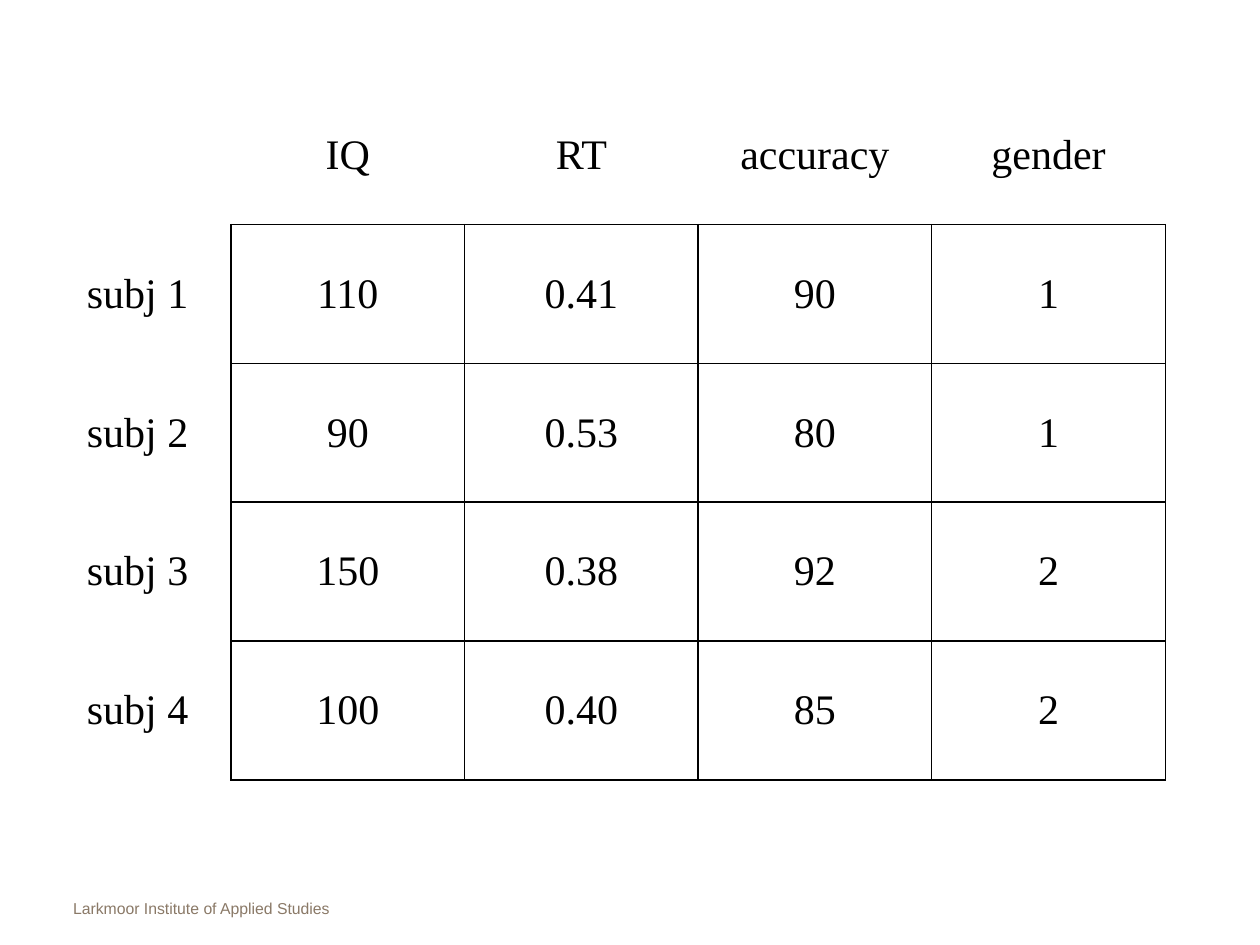
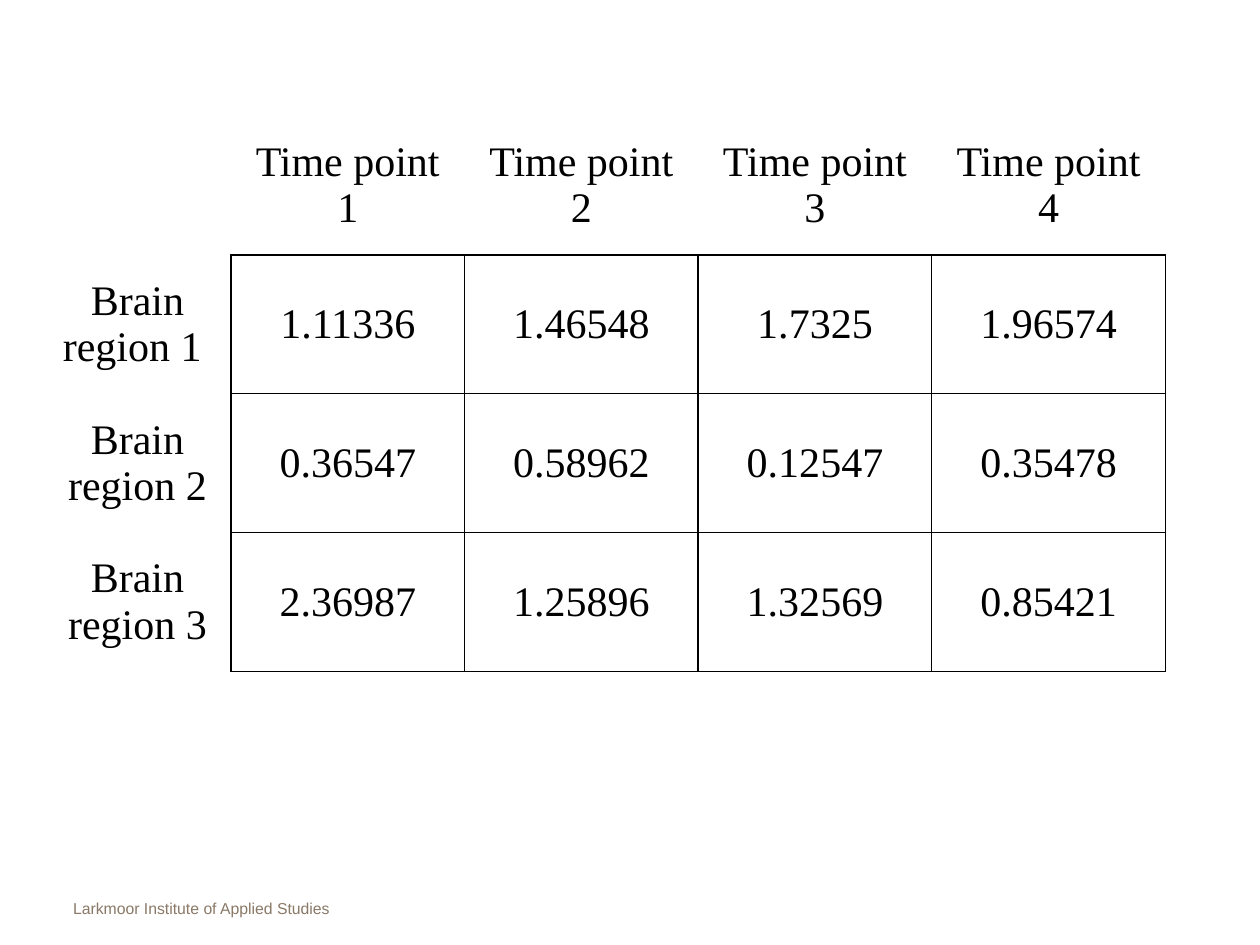
import pptx
import pptx.dml.color
import pptx.enum.text
import pptx.util
from pptx.oxml.ns import qn
import lxml.etree

SLIDE_WIDTH = pptx.util.Inches(10)
SLIDE_HEIGHT = pptx.util.Inches(7.5)
BLACK = "000000"
FOOTER_COLOUR = "8A7967"
FOOTER_TEXT = "Larkmoor Institute of Applied Studies"

TABLE_LEFT = pptx.util.Inches(0.35)
TABLE_WIDTH = pptx.util.Inches(8.9)
ROW_HEIGHT = pptx.util.Cm(2.8)
LABEL_SHARE, VALUE_SHARE = 4, 5  # relative widths of label and value columns
BORDER_WIDTH = pptx.util.Pt(1)

SUBJECT_ROWS = [
    ["", "IQ", "RT", "accuracy", "gender"],
    ["subj 1", "110", "0.41", "90", "1"],
    ["subj 2", "90", "0.53", "80", "1"],
    ["subj 3", "150", "0.38", "92", "2"],
    ["subj 4", "100", "0.40", "85", "2"],
]
REGION_ROWS = [
    [""] + [f"Time point\n{number}" for number in range(1, 5)],
    ["Brain region 1 ", "1.11336", "1.46548", "1.7325", "1.96574"],
    ["Brain region 2", "0.36547", "0.58962", "0.12547", "0.35478"],
    ["Brain region 3", "2.36987", "1.25896", "1.32569", "0.85421"],
]


def colour(hex_string):
    return pptx.dml.color.RGBColor.from_string(hex_string)


def format_text(frame, font_name, size, hex_string, alignment):
    for para in frame.paragraphs:
        para.alignment = alignment
        for span in para.runs:
            span.font.name = font_name
            span.font.size = pptx.util.Pt(size)
            span.font.color.rgb = colour(hex_string)


def set_borders(cell, visible_edges):
    """Draw the edges named in visible_edges (L, R, T, B) and hide the others."""
    properties = cell._tc.get_or_add_tcPr()
    for edge in "LRTB":
        line = lxml.etree.SubElement(properties, qn(f"a:ln{edge}"), w=str(BORDER_WIDTH))
        if edge in visible_edges:
            fill = lxml.etree.SubElement(line, qn("a:solidFill"))
            lxml.etree.SubElement(fill, qn("a:srgbClr"), val=BLACK)
        else:
            lxml.etree.SubElement(line, qn("a:noFill"))


def grid_edges(row, column):
    """Only the value cells are ruled; headings share the edge they touch."""
    if row and column:
        return "LRTB"
    if row:
        return "R"
    return "B" if column else ""


def add_data_table(page, top, rows):
    column_count = len(rows[0])
    frame = page.shapes.add_table(len(rows), column_count, TABLE_LEFT, top,
                                  TABLE_WIDTH, ROW_HEIGHT * len(rows))
    table = frame.table
    table.first_row = False
    table.horz_banding = False

    shares = [LABEL_SHARE] + [VALUE_SHARE] * (column_count - 1)
    for column, share in zip(table.columns, shares):
        column.width = round(TABLE_WIDTH * share / sum(shares))
    for row in table.rows:
        row.height = ROW_HEIGHT

    for row_index, texts in enumerate(rows):
        for column_index, text in enumerate(texts):
            cell = table.cell(row_index, column_index)
            cell.text_frame.text = text
            cell.vertical_anchor = pptx.enum.text.MSO_ANCHOR.MIDDLE
            format_text(cell.text_frame, "Times New Roman", 24, BLACK,
                        pptx.enum.text.PP_ALIGN.CENTER)
            set_borders(cell, grid_edges(row_index, column_index))
            cell.fill.background()


def add_footer(page):
    box = page.shapes.add_textbox(pptx.util.Inches(0.58), pptx.util.Inches(7.08),
                                  pptx.util.Inches(2.42), pptx.util.Inches(0.25))
    frame = box.text_frame
    frame.word_wrap = True
    frame.margin_left = frame.margin_right = 0
    frame.text = FOOTER_TEXT
    format_text(frame, "Arial", 9, FOOTER_COLOUR, pptx.enum.text.PP_ALIGN.LEFT)


def add_table_page(deck, table_top, rows):
    page = deck.slides.add_slide(deck.slide_layouts[6])
    add_footer(page)
    add_data_table(page, pptx.util.Inches(table_top), rows)


def main():
    deck = pptx.Presentation()
    deck.slide_width = SLIDE_WIDTH
    deck.slide_height = SLIDE_HEIGHT
    add_table_page(deck, 0.68, SUBJECT_ROWS)
    add_table_page(deck, 0.92, REGION_ROWS)
    deck.save("out.pptx")


if __name__ == "__main__":
    main()
